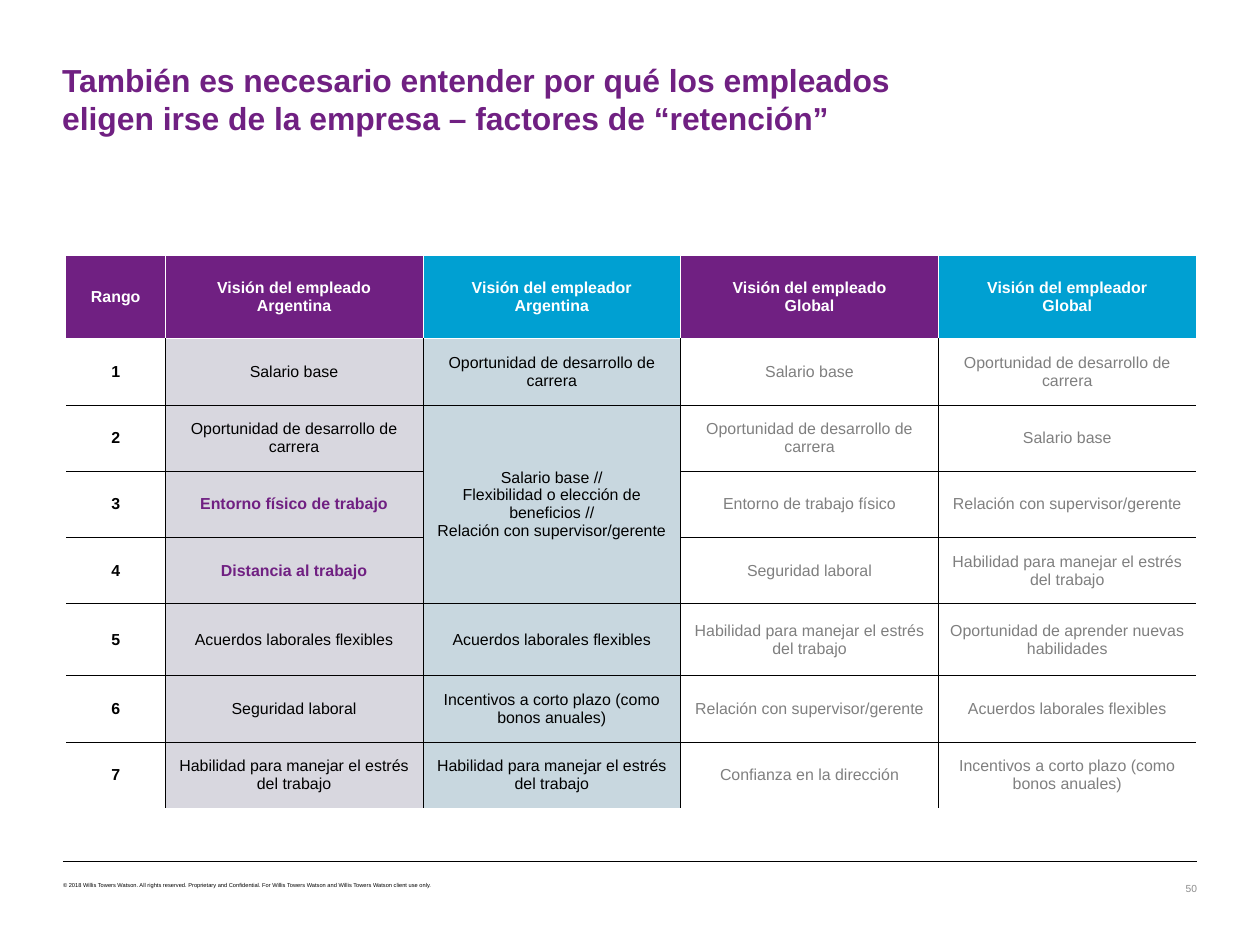
from copy import deepcopy
from pptx import Presentation
from pptx.dml.color import RGBColor
from pptx.enum.shapes import MSO_CONNECTOR
from pptx.enum.text import MSO_ANCHOR, MSO_AUTO_SIZE, PP_ALIGN
from pptx.oxml.ns import qn
from pptx.util import Inches, Pt
from lxml.etree import SubElement

# Content
TITLE = ("También es necesario entender por qué los empleados\n"
         "eligen irse de la empresa – factores de “retención”")
NOTICE = ("© 2018 Willis Towers Watson. All rights reserved. Proprietary and Confidential. "
          "For Willis Towers Watson and Willis Towers Watson client use only.")
PAGE = "50"
BASE = "Salario base"
CAREER = "Oportunidad de desarrollo de carrera"
BOSS = "Relación con supervisor/gerente"
STRESS = "Habilidad para manejar el estrés del trabajo"
FLEX = "Acuerdos laborales flexibles"
BONUS = "Incentivos a corto plazo (como bonos anuales)"
SAFE = "Seguridad laboral"
PLACE = "Entorno físico de trabajo"
TRAVEL = "Distancia al trabajo"
JOINT = (BASE + " //", "Flexibilidad o elección de beneficios //", BOSS)
ROWS = [
    ["Rango", "Visión del empleado\nArgentina", "Visión del empleador\nArgentina",
     "Visión del empleado\nGlobal", "Visión del empleador\nGlobal"],
    ["1", BASE, CAREER, BASE, CAREER],
    ["2", CAREER, JOINT, CAREER, BASE],
    ["3", PLACE, None, "Entorno de trabajo físico", BOSS],
    ["4", TRAVEL, None, SAFE, STRESS],
    ["5", FLEX, FLEX, STRESS, "Oportunidad de aprender nuevas habilidades"],
    ["6", SAFE, BONUS, BOSS, FLEX],
    ["7", STRESS, STRESS, "Confianza en la dirección", BONUS],
]
STRONG = (PLACE, TRAVEL)

# Look
COLORS = {"purple": "702082", "blue": "00A0D2", "lilac": "D8D7DF", "mist": "C8D7DF",
          "white": "FFFFFF", "black": "000000", "gray": "7F7F7F", "pale": "8C8C8C"}
HEADS = ["purple", "purple", "blue", "purple", "blue"]
FILLS = [None, "lilac", "mist", None, None]
INKS = ["black", "black", "black", "gray", "gray"]
WIDTHS = [1.21] + [3.15] * 4
HEIGHTS = [1.01] + [0.81] * 4 + [0.88] + [0.81] * 2
LEFT, RIGHT = 0.77, 14.63


def color(name):
    return RGBColor.from_string(COLORS[name])


def assign(obj, values):
    for key, value in values.items():
        setattr(obj, key, value)


def write(frame, parts, size, ink, bold=False, align=PP_ALIGN.LEFT):
    for i, part in enumerate(parts):
        para = frame.add_paragraph() if i else frame.paragraphs[0]
        para.text = part
        para.alignment = align
        for run in para.runs:
            assign(run.font, {"name": "Arial", "size": Pt(size), "bold": bold})
            run.font.color.rgb = color(ink)
        # Line breaks take the size of the text around them
        for gap in para._p.findall(qn("a:br")):
            gap.append(deepcopy(para.runs[0]._r.rPr))


def border(cell, side, name):
    line = SubElement(cell._tc.get_or_add_tcPr(), qn("a:ln" + side), w=str(Pt(0.75)))
    if name:
        fill = SubElement(line, qn("a:solidFill"))
        SubElement(fill, qn("a:srgbClr"), val=COLORS[name])
    else:
        SubElement(line, qn("a:noFill"))


def paint(cell, name):
    if name:
        cell.fill.solid()
        cell.fill.fore_color.rgb = color(name)
    else:
        cell.fill.background()


def label(slide, text, box, size, ink, align):
    frame = slide.shapes.add_textbox(*map(Inches, box)).text_frame
    assign(frame, {"word_wrap": True, "margin_left": 0, "margin_right": 0,
                   "margin_top": 0, "margin_bottom": 0})
    write(frame, [text], size, ink, align=align)


def add_title(slide):
    title = slide.shapes.title
    assign(title, {"left": Inches(0.66), "top": Inches(0.73),
                   "width": Inches(10.53), "height": Inches(0.95)})
    paint(title, "white")
    frame = title.text_frame
    assign(frame, {"word_wrap": True, "auto_size": MSO_AUTO_SIZE.NONE,
                   "vertical_anchor": MSO_ANCHOR.MIDDLE})
    write(frame, [TITLE], 28, "purple", True)


def add_ranks(slide):
    box = (0.81, 3.13, sum(WIDTHS), sum(HEIGHTS))
    table = slide.shapes.add_table(len(ROWS), len(WIDTHS), *map(Inches, box)).table
    assign(table, {"first_row": False, "horz_banding": False})
    for col, width in zip(table.columns, WIDTHS):
        col.width = Inches(width)
    for row, height in zip(table.rows, HEIGHTS):
        row.height = Inches(height)
    table.cell(2, 2).merge(table.cell(4, 2))
    last_row, last_col = len(ROWS) - 1, len(WIDTHS) - 1
    for r, row in enumerate(ROWS):
        for c, text in enumerate(row):
            cell = table.cell(r, c)
            head, rank = r == 0, c == 0
            # Rules run between cells only, white around the header
            rule = "black" if r else "white"
            border(cell, "L", rule if c else None)
            border(cell, "R", rule if c < last_col else None)
            border(cell, "T", ("black" if r > 1 else "white") if r else None)
            border(cell, "B", rule if r < last_row else None)
            paint(cell, HEADS[c] if head else FILLS[c])
            side = (0.1 if rank else 0.01) if head else (0 if rank else 0.1)
            edge = 0.08 if head or rank else 0.05
            assign(cell, {"vertical_anchor": MSO_ANCHOR.MIDDLE,
                          "margin_left": Inches(side), "margin_right": Inches(side),
                          "margin_top": Inches(edge), "margin_bottom": Inches(edge)})
            if text:
                strong = text in STRONG
                ink = "white" if head else "purple" if strong else INKS[c]
                parts = text if isinstance(text, tuple) else [text]
                write(cell.text_frame, parts, 14, ink, head or rank or strong,
                      PP_ALIGN.CENTER)


def add_footer(slide):
    ends = map(Inches, (LEFT, 10.52, RIGHT, 10.52))
    line = slide.shapes.add_connector(MSO_CONNECTOR.STRAIGHT, *ends)
    line.line.width = Pt(0.25)
    line.line.color.rgb = color("black")
    SubElement(line._element.spPr, qn("a:effectLst"))
    label(slide, PAGE, (13.99, 10.78, 0.64, 0.15), 9, "pale", PP_ALIGN.RIGHT)
    label(slide, NOTICE, (LEFT, 10.78, 8.89, 0.08), 5, "black", PP_ALIGN.LEFT)


def main():
    deck = Presentation()
    assign(deck, {"slide_width": Inches(15.4), "slide_height": Inches(11.55)})
    slide = deck.slides.add_slide(deck.slide_layouts[5])
    add_title(slide)
    add_ranks(slide)
    add_footer(slide)
    deck.save("out.pptx")


if __name__ == "__main__":
    main()
